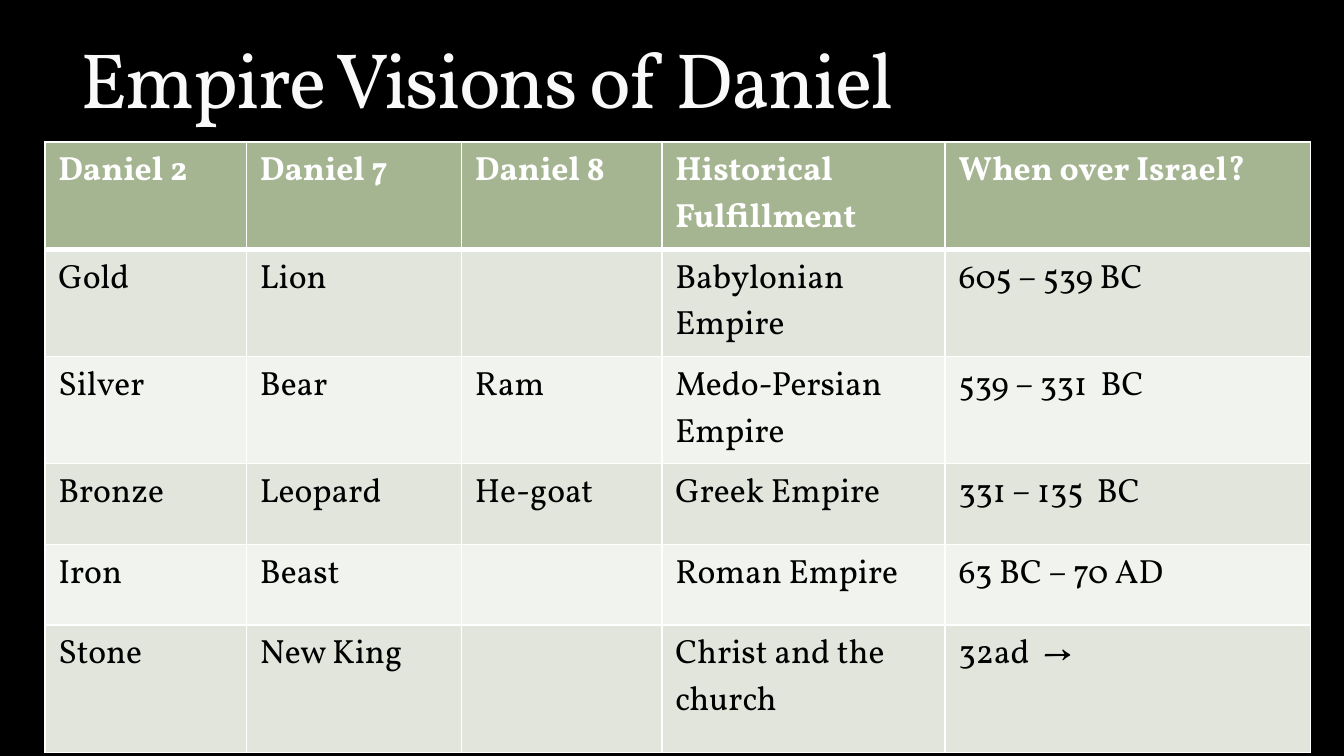
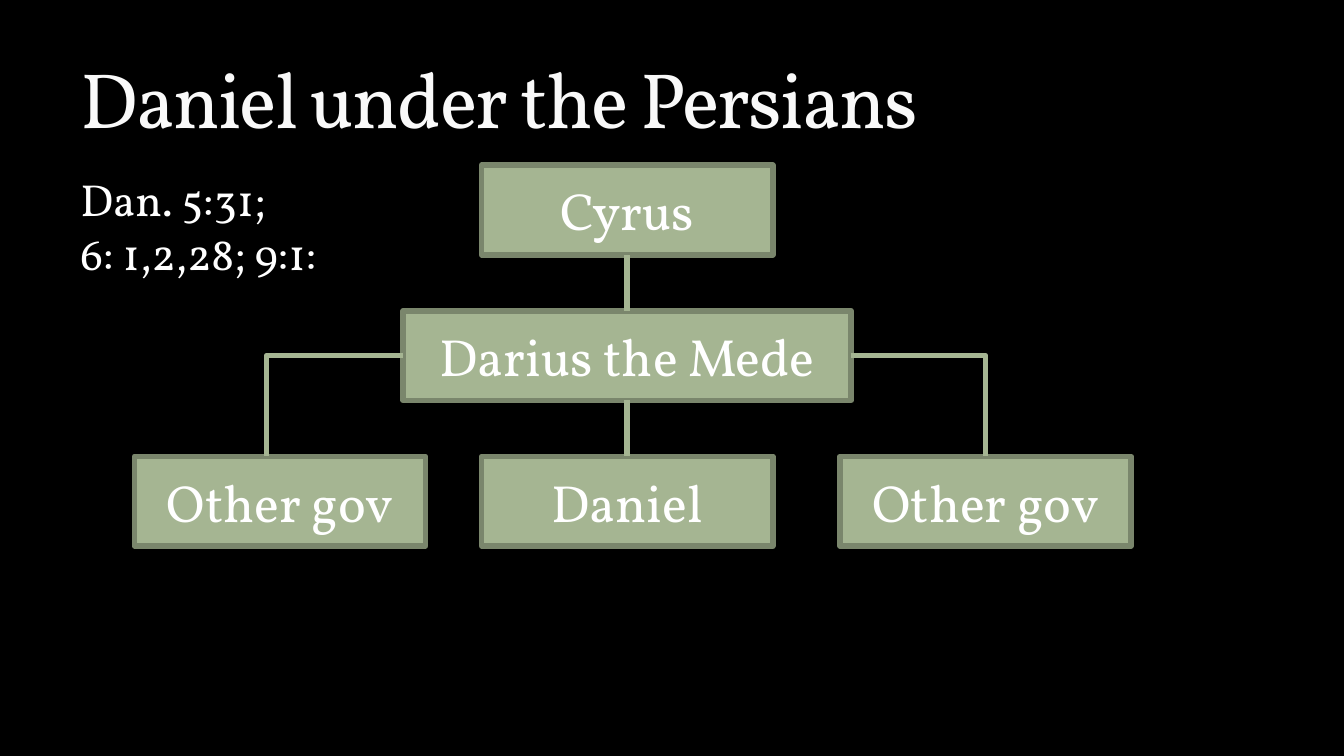
"""Build two slides on the empires and the Persian government in Daniel."""
from lxml.etree import SubElement
from pptx import Presentation
from pptx.dml.color import RGBColor
from pptx.enum.shapes import MSO_CONNECTOR, MSO_SHAPE
from pptx.enum.text import MSO_ANCHOR, MSO_AUTO_SIZE, PP_ALIGN
from pptx.oxml import parse_xml
from pptx.oxml.ns import nsdecls, qn
from pptx.util import Inches, Pt

FONT = "Vollkorn"
BLACK = RGBColor(0x00, 0x00, 0x00)
WHITE = RGBColor(0xFF, 0xFF, 0xFF)
OFF_WHITE = RGBColor(0xF9, 0xF9, 0xF9)
TITLE_EDGE = RGBColor(0x3C, 0x44, 0x22)
GREEN = RGBColor(0xA5, 0xB5, 0x92)
DARK_GREEN = RGBColor(0x7A, 0x86, 0x6C)
BAND = RGBColor(0xE1, 0xE5, 0xDC)
PALE_BAND = RGBColor(0xF0, 0xF3, 0xEE)

prs = Presentation()
prs.slide_width, prs.slide_height = Inches(10), Inches(5.625)
U = prs.slide_width // 120
bg = prs.slide_master.background.fill
bg.solid()
bg.fore_color.rgb = BLACK


def add_run(p, text, size, color, bold=False):
    r = p.add_run()
    r.text = text
    r.font.name, r.font.size, r.font.bold = FONT, Pt(size), bold
    r.font.color.rgb = color
    return r


def add_titled_slide(title, rows):
    s = prs.slides.add_slide(prs.slide_layouts[5])
    sp = s.shapes.title
    sp.left, sp.top, sp.width, sp.height = 6 * U, int(1.5 * U), 108 * U, int(rows * U)
    tf = sp.text_frame
    tf.vertical_anchor, tf.auto_size = MSO_ANCHOR.BOTTOM, MSO_AUTO_SIZE.NONE
    tf.word_wrap = True
    p = tf.paragraphs[0]
    p.alignment = PP_ALIGN.LEFT
    rPr = add_run(p, title, 42, OFF_WHITE).font._element
    rPr.set("spc", "-100")
    rPr.insert(0, parse_xml(
        f'<a:ln {nsdecls("a")} w="{Pt(0.25)}"><a:solidFill><a:srgbClr val="{TITLE_EDGE}">'
        '<a:alpha val="25000"/></a:srgbClr></a:solidFill></a:ln>'))
    return s


s = add_titled_slide("Empire Visions of Daniel", 10.2)
cells = [
    ["Daniel 2", "Daniel 7", "Daniel 8", "Historical Fulfillment", "When over Israel?"],
    ["Gold", "Lion", "", "Babylonian Empire", "605 – 539 BC"],
    ["Silver", "Bear", "Ram", "Medo-Persian Empire", "539 – 331  BC"],
    ["Bronze", "Leopard", "He-goat", "Greek Empire", "331 – 135  BC"],
    ["Iron", "Beast", "", "Roman Empire", "63 BC – 70 AD"],
    ["Stone", "New King", "", "Christ and the church", "32ad  →"],
]
col_widths = [18, 19.2, 17.9, 25.3, 32.6]
row_heights = [7.8, 9.4, 9.4, 7.2, 7.2, 11.4]
table = s.shapes.add_table(len(cells), len(col_widths), 4 * U, int(12.7 * U),
                           int(sum(col_widths) * U), int(sum(row_heights) * U)).table
for col, width in zip(table.columns, col_widths):
    col.width = int(width * U)
for i, (row, height) in enumerate(zip(table.rows, row_heights)):
    row.height = int(height * U)
    for cell, text in zip(row.cells, cells[i]):
        tcPr = cell._tc.get_or_add_tcPr()
        for side in ("lnL", "lnR", "lnT", "lnB"):
            heavy = (i, side) in ((0, "lnB"), (1, "lnT"))
            ln = SubElement(tcPr, qn(f"a:{side}"), w=str(Pt(3 if heavy else 1)))
            SubElement(SubElement(ln, qn("a:solidFill")), qn("a:srgbClr"), val=str(WHITE))
        cell.fill.solid()
        cell.fill.fore_color.rgb = GREEN if i == 0 else BAND if i % 2 else PALE_BAND
        if text:
            add_run(cell.text_frame.paragraphs[0], text, 18, BLACK if i else WHITE, i == 0)

s = add_titled_slide("Daniel under the Persians", 12)
TOP, PITCH, BOX_H = 14.75, 13, 8
boxes = []
for name, x, level, width in [
    ("Cyrus", 43, 0, 26),
    ("Other gov", 12, 2, 26),
    ("Other gov", 75, 2, 26),
    ("Daniel", 43, 2, 26),
    ("Darius the Mede", 36, 1, 40),
]:
    sp = s.shapes.add_shape(MSO_SHAPE.RECTANGLE, x * U, int((TOP + level * PITCH) * U),
                            width * U, BOX_H * U)
    sp.shadow.inherit = False
    sp.fill.solid()
    sp.fill.fore_color.rgb = GREEN
    sp.line.color.rgb, sp.line.width = DARK_GREEN, Pt(3)
    tf = sp.text_frame
    tf.vertical_anchor = MSO_ANCHOR.MIDDLE
    p = tf.paragraphs[0]
    p.alignment = PP_ALIGN.CENTER
    add_run(p, name, 28, WHITE)
    boxes.append(sp)
cyrus, left_gov, right_gov, daniel, darius = boxes

mid_y = darius.top + darius.height // 2
straight = [s.shapes.add_connector(MSO_CONNECTOR.STRAIGHT, 0, 0, 0, 0) for _ in range(2)]
for cxn, upper, lower in zip(straight, (cyrus, darius), (darius, daniel)):
    cxn.begin_connect(upper, 2)
    cxn.end_connect(lower, 0)
bent = []
for x1, x2 in ((darius.left + darius.width, 88 * U), (darius.left, int(23.8 * U))):
    cxn = s.shapes.add_connector(MSO_CONNECTOR.ELBOW, x1, mid_y, x2, left_gov.top)
    avLst = cxn._element.spPr.find(qn("a:prstGeom")).get_or_add_avLst()
    SubElement(avLst, qn("a:gd"), name="adj1", fmla="val 100000")
    bent.append(cxn)
for cxn in straight + bent:
    cxn.line.color.rgb, cxn.line.width = GREEN, Pt(3)
    SubElement(cxn._element.spPr, qn("a:effectLst"))

tf = s.shapes.add_textbox(6 * U, int(TOP * U), int(23.6 * U), int(10.9 * U)).text_frame
tf.word_wrap, tf.auto_size = False, MSO_AUTO_SIZE.SHAPE_TO_FIT_TEXT
for i, verse in enumerate(["Dan. 5:31;", "6: 1,2,28; 9:1:"]):
    p = tf.add_paragraph() if i else tf.paragraphs[0]
    add_run(p, verse, 24, WHITE)

prs.save("out.pptx")
